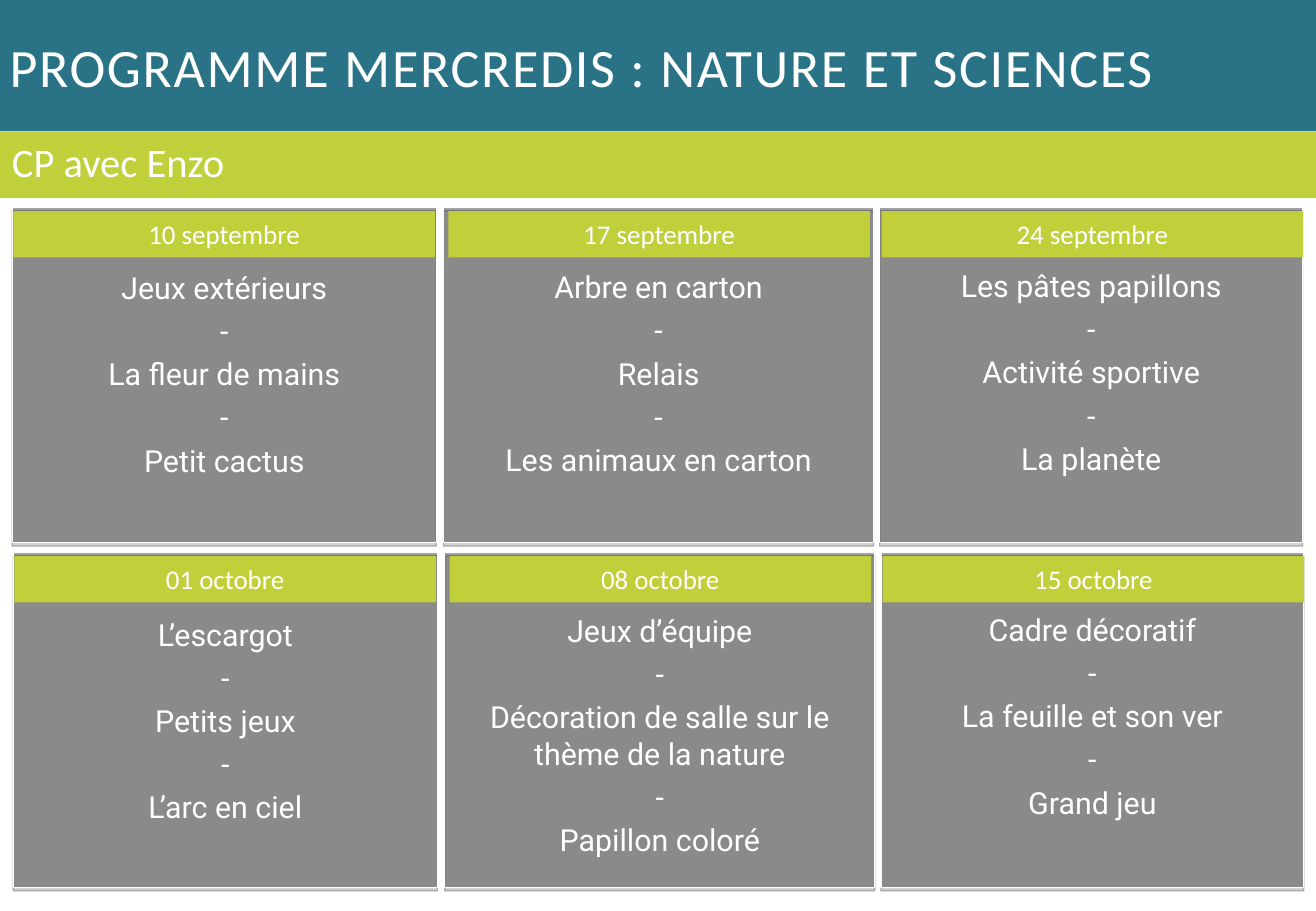
import pptx
import pptx.util
import pptx.dml.color
import pptx.enum.shapes
import pptx.enum.text
import pptx.oxml
import pptx.oxml.ns

Pt = pptx.util.Pt
ALIGN = pptx.enum.text.PP_ALIGN
ANCHOR = pptx.enum.text.MSO_ANCHOR
RECT = pptx.enum.shapes.MSO_SHAPE.RECTANGLE
NS = pptx.oxml.ns.nsdecls("a")

HUES = {"teal": "2A7387", "lime": "C0CF3A", "gray": "404040",
        "white": "FFFFFF", "black": "000000"}

# Column: left, card width, date inset
COLS = [(7.2, 251.3, 0.7), (262.8, 254.9, 2.9), (521.3, 250.6, 1.1)]
# Row: left shift, top
ROWS = [(0, 123.1), (0.7, 327.6)]
CARD_H = 198.7

# Date, drop of the text below the card top, activities
DAYS = [
    [("10 septembre", 32.8, ["Jeux extérieurs", "La fleur de mains", "Petit cactus"]),
     ("17 septembre", 32.4, ["Arbre en carton", "Relais", "Les animaux en carton"]),
     ("24 septembre", 31.7, ["Les pâtes papillons", "Activité sportive", "La planète"])],
    [("01 octobre", 33.8, ["L’escargot", "Petits jeux", "L’arc en ciel"]),
     ("08 octobre", 31.7, ["Jeux d’équipe",
                           "Décoration de salle sur le thème de la nature",
                           "Papillon coloré"]),
     ("15 octobre", 31, ["Cadre décoratif", "La feuille et son ver", "Grand jeu"])],
]


def tint(name):
    return pptx.dml.color.RGBColor.from_string(HUES[name])


def rect(slide, box, hue):
    shape = slide.shapes.add_shape(RECT, *map(Pt, box))
    shape.shadow.inherit = False
    shape.fill.solid()
    shape.fill.fore_color.rgb = tint(hue)
    shape.line.fill.background()
    return shape


def write(shape, lines, size, font, align, anchor=ANCHOR.TOP, track=0):
    frame = shape.text_frame
    frame.word_wrap = True
    frame.vertical_anchor = anchor
    for i, line in enumerate(lines):
        para = frame.paragraphs[0] if i == 0 else frame.add_paragraph()
        para.alignment = align
        if i:
            para.space_before = Pt(4)
        run = para.add_run()
        run.text = line
        run.font.size = Pt(size)
        run.font.name = font
        run.font.color.rgb = tint("white")
        if track:
            run.font._element.set("spc", str(track * 100))


def head(slide, box):
    """Title band with the group band under it."""
    left, top, width, height = box
    band = rect(slide, (left - 1.4, top, width + 1.4, 77.8), "teal")
    write(band, ["PROGRAMME MERCREDIS : NATURE ET SCIENCES"], 32, "Calibri",
          ALIGN.LEFT, ANCHOR.MIDDLE, 1)
    group = rect(slide, (left, top + 77.8, width, height - 77.8), "lime")
    write(group, ["CP avec Enzo"], 24, "Calibri", ALIGN.LEFT)


def card(slide, box, inset, day):
    """Grey panel, date strip and list of activities."""
    left, top, width, height = box
    date, drop, acts = day

    # Translucent panel with a thin shadow below
    panel = rect(slide, box, "gray")
    panel.line.color.rgb = tint("white")
    panel.line.width = Pt(0.75)
    props = panel._element.spPr
    color = props.find(pptx.oxml.ns.qn("a:solidFill"))[0]
    color.append(pptx.oxml.parse_xml(f'<a:alpha {NS} val="49000"/>'))
    props.find(pptx.oxml.ns.qn("a:effectLst")).append(pptx.oxml.parse_xml(
        f'<a:outerShdw {NS} blurRad="0" dist="{Pt(1.8)}" dir="5400000" '
        f'rotWithShape="0"><a:srgbClr val="{HUES["black"]}">'
        '<a:alpha val="35000"/></a:srgbClr></a:outerShdw>'))

    # Date strip
    strip = rect(slide, (left + inset, top + 2.1, 249.8, 27.4), "lime")
    write(strip, [date], 16, "Calibri", ALIGN.CENTER)

    # Activities, parted by dashes
    lines = [acts[0]]
    for act in acts[1:]:
        lines += ["-", act]
    mid = left + width / 2
    text = slide.shapes.add_textbox(
        *map(Pt, (mid - 125.6, top + drop, 251.3, height - drop - 2)))
    write(text, lines, 18, "Roboto", ALIGN.CENTER)


def main():
    deck = pptx.Presentation()
    deck.slide_width, deck.slide_height = Pt(779.8), Pt(540)
    slide = deck.slides.add_slide(deck.slide_layouts[6])
    head(slide, (0, 0, 781.2, 117.4))
    for (shift, top), days in zip(ROWS, DAYS):
        for (left, width, inset), day in zip(COLS, days):
            card(slide, (left + shift, top, width, CARD_H), inset, day)
    deck.save("out.pptx")


if __name__ == "__main__":
    main()
